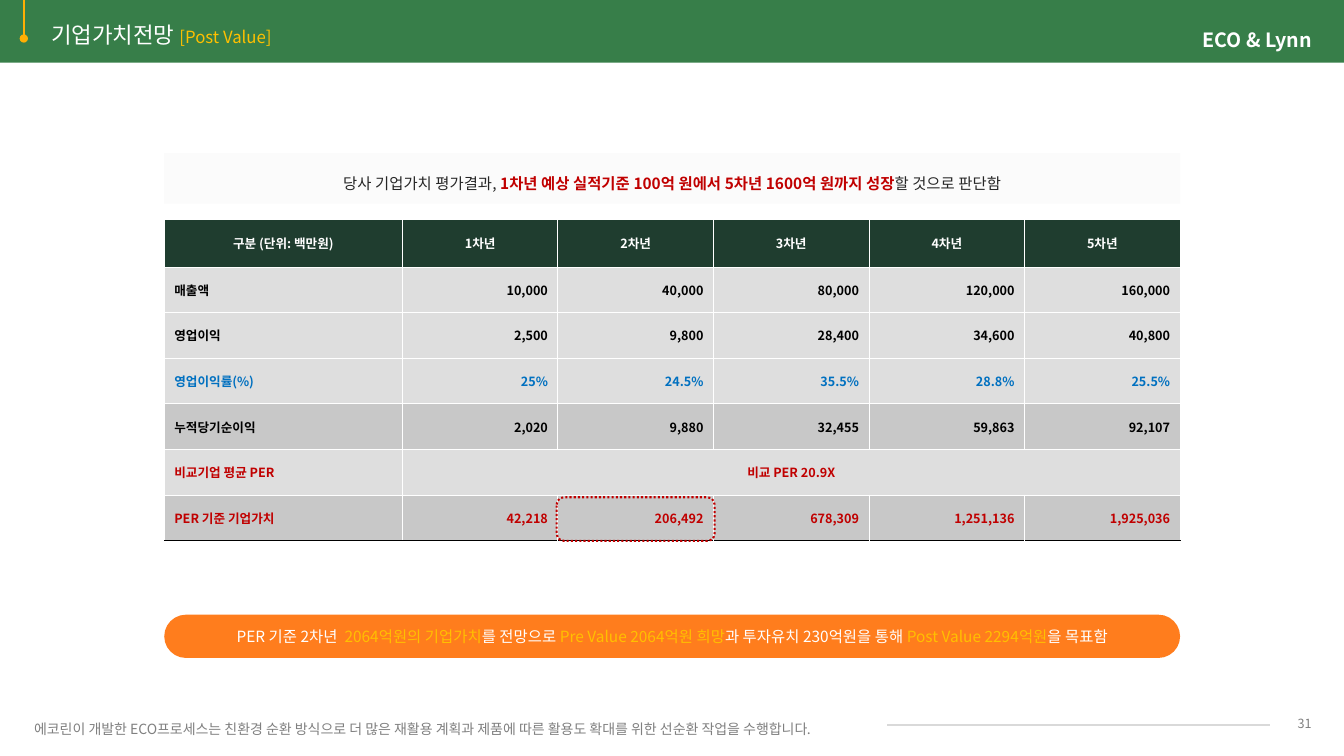
from lxml.etree import SubElement
from pptx import Presentation
from pptx.dml.color import RGBColor
from pptx.enum.dml import MSO_LINE_DASH_STYLE as Dash
from pptx.enum.shapes import MSO_CONNECTOR as Connector, MSO_SHAPE as Shape
from pptx.enum.text import MSO_ANCHOR as Anchor, PP_ALIGN as Align
from pptx.oxml import parse_xml
from pptx.oxml.ns import nsdecls, qn
from pptx.util import Cm, Pt

FONT = "Noto Sans CJK KR"
WHITE = RGBColor(0xFF, 0xFF, 0xFF)
BLACK = RGBColor(0x00, 0x00, 0x00)
INK = RGBColor(0x26, 0x26, 0x26)
GREY = RGBColor(0x80, 0x80, 0x80)
RULE_GREY = RGBColor(0xD9, 0xD9, 0xD9)
ROW_LIGHT = RGBColor(0xD9, 0xD9, 0xD9)
ROW_DARK = RGBColor(0xBF, 0xBF, 0xBF)
PALE = RGBColor(0xF8, 0xF8, 0xF8)
GREEN = RGBColor(0x37, 0x7E, 0x49)
DARK_GREEN = RGBColor(0x1F, 0x3D, 0x2F)
AMBER = RGBColor(0xFF, 0xAF, 0x04)
GOLD = RGBColor(0xFF, 0xC0, 0x00)
ORANGE = RGBColor(0xFF, 0x7D, 0x1D)
RED = RGBColor(0xC0, 0x00, 0x00)
BLUE = RGBColor(0x00, 0x70, 0xC0)

SLIDE_WIDTH, SLIDE_HEIGHT = 33.87, 19.05
LABEL_WIDTH, YEAR_WIDTH = 6, 3.92
HEAD_HEIGHT, ROW_HEIGHT = 1.19, 1.15
YEARS = ["1차년", "2차년", "3차년", "4차년", "5차년"]
# Label, values, text colour, fill
ROWS = [
    ("매출액", ["10,000", "40,000", "80,000", "120,000", "160,000"], BLACK, ROW_LIGHT),
    ("영업이익", ["2,500", "9,800", "28,400", "34,600", "40,800"], BLACK, ROW_LIGHT),
    ("영업이익률(%)", ["25%", "24.5%", "35.5%", "28.8%", "25.5%"], BLUE, ROW_LIGHT),
    ("누적당기순이익", ["2,020", "9,880", "32,455", "59,863", "92,107"], BLACK, ROW_DARK),
    ("비교기업 평균 PER", ["비교 PER 20.9X"], RED, ROW_LIGHT),
    ("PER 기준 기업가치", ["42,218", "206,492", "678,309", "1,251,136", "1,925,036"],
     RED, ROW_DARK),
]


def set_opacity(color, percent):
    SubElement(color, qn("a:alpha")).set("val", str(percent * 1000))


def write(frame, runs, size, align=Align.LEFT, bold=False, spacing=None):
    """Fill the first paragraph with (text, colour) runs; returns the runs."""
    paragraph = frame.paragraphs[0]
    paragraph.alignment = align
    if spacing:
        paragraph.line_spacing = spacing
    font = paragraph.font
    font.name, font.size, font.bold = FONT, Pt(size), bold
    SubElement(font._element, qn("a:ea")).set("typeface", FONT)
    written = []
    for text, color in runs:
        run = paragraph.add_run()
        run.text = text
        run.font.color.rgb = color
        written.append(run)
    return written


def add_box(slide, kind, box, fill=None, anchor=Anchor.MIDDLE):
    shape = slide.shapes.add_shape(kind, *(Cm(length) for length in box))
    shape.shadow.inherit = False
    shape.line.fill.background()
    if fill is None:
        shape.fill.background()
    else:
        shape.fill.solid()
        shape.fill.fore_color.rgb = fill
    shape.text_frame.word_wrap = True
    shape.text_frame.vertical_anchor = anchor
    return shape


def add_line(slide, start, end, color, width):
    line = slide.shapes.add_connector(
        Connector.STRAIGHT, *(Cm(length) for length in start + end))
    line.line.color.rgb = color
    line.line.width = Pt(width)
    SubElement(line._element.spPr, qn("a:effectLst"))
    return line


def add_footer(slide, left, top, width, height):
    middle = top + height / 2
    add_line(slide, (8.56, middle + 0.03), (32, middle + 0.03), RULE_GREY, 1)
    note = add_box(slide, Shape.RECTANGLE, (left + 0.61, top, 21.74, height), WHITE, Anchor.TOP)
    write(note.text_frame, [("에코린이 개발한 ECO프로세스는 친환경 순환 방식으로 더 많은 재활용 계획과 "
                             "제품에 따른 활용도 확대를 위한 선순환 작업을 수행합니다.", GREY)],
          10, spacing=1.5)
    number = slide.shapes.add_textbox(
        Cm(left + width - 1.84), Cm(top), Cm(1.7), Cm(height)).text_frame
    number.word_wrap = True
    number.vertical_anchor = Anchor.MIDDLE
    number.margin_left = number.margin_right = Cm(0.38)
    write(number, [("31", GREY)], 9, Align.CENTER)


def add_header(slide, left, top, width, height):
    add_box(slide, Shape.RECTANGLE, (left, top, width, height), GREEN)
    # Hanging line with a round end
    marker = add_line(slide, (left + 0.6, top), (left + 0.6, top + 0.97), AMBER, 1.5)
    SubElement(marker.line._get_or_add_ln(), qn("a:tailEnd")).set("type", "oval")
    # Company name
    name = add_box(slide, Shape.RECTANGLE, (left + width - 3.75, top + 0.56, 3.12, 0.89))
    frame = name.text_frame
    frame.margin_left = frame.margin_right = frame.margin_top = frame.margin_bottom = 0
    write(frame, [("ECO & Lynn", WHITE)], 14, Align.CENTER, bold=True)
    # Title
    title = slide.shapes.add_textbox(Cm(left + 1.04), Cm(top + 0.41), Cm(6.53), Cm(0.94))
    title.text_frame.word_wrap = False
    runs = write(title.text_frame, [("기업가치전망 ", WHITE), ("[Post Value]", GOLD)], 16)
    runs[1].font.size = Pt(12)


def add_statement(slide, left, top, width, height):
    panel = add_box(slide, Shape.RECTANGLE, (left, top, width, height), PALE)
    set_opacity(panel._element.spPr.find(qn("a:solidFill"))[0], 50)
    runs = write(panel.text_frame, [
        ("당사 기업가치 평가결과, ", INK),
        ("1차년 예상 실적기준 100억 원에서 5차년 1600억 원까지 성장", RED),
        ("할 것으로 판단함", INK)], 11, Align.CENTER, spacing=1.5)
    runs[1].font.bold = True


def fill_cell(cell, text, align, color, fill, opacity=100, bottom=(WHITE, 0.75)):
    cell.fill.solid()
    cell.fill.fore_color.rgb = fill
    properties = cell._tc.get_or_add_tcPr()
    set_opacity(properties.find(qn("a:solidFill"))[0], opacity)
    edges = [(side, WHITE, 0.75) for side in "LRT"] + [("B", *bottom)]
    for index, (side, line_color, width) in enumerate(edges):
        properties.insert(index, parse_xml(
            f'<a:ln{side} {nsdecls("a")} w="{Pt(width)}"><a:solidFill>'
            f'<a:srgbClr val="{line_color}"/></a:solidFill></a:ln{side}>'))
    cell.vertical_anchor = Anchor.MIDDLE
    write(cell.text_frame, [(text, color)], 9, align, bold=True)


def add_value_table(slide, left, top, width, height):
    table = slide.shapes.add_table(len(ROWS) + 1, len(YEARS) + 1, Cm(left), Cm(top),
                                   Cm(width), Cm(height)).table
    table.horz_banding = False
    for index, column in enumerate(table.columns):
        column.width = Cm(YEAR_WIDTH if index else LABEL_WIDTH)
    for index, row in enumerate(table.rows):
        row.height = Cm(ROW_HEIGHT if index else HEAD_HEIGHT)
    for index, text in enumerate(["구분 (단위: 백만원)"] + YEARS):
        fill_cell(table.cell(0, index), text, Align.CENTER, WHITE, DARK_GREEN)
    for row, (label, values, color, fill) in enumerate(ROWS, 1):
        bottom = (BLACK, 1) if row == len(ROWS) else (WHITE, 0.75)
        fill_cell(table.cell(row, 0), label, Align.LEFT, color, fill, 85, bottom)
        shared = len(values) == 1
        if shared:
            table.cell(row, 1).merge(table.cell(row, len(YEARS)))
        for column, value in enumerate(values, 1):
            fill_cell(table.cell(row, column), value,
                      Align.CENTER if shared else Align.RIGHT, color, fill, 85, bottom)
    # Dotted frame around the second year's company value
    frame = add_box(slide, Shape.ROUNDED_RECTANGLE,
                    (left + LABEL_WIDTH + YEAR_WIDTH - 0.03, top + height - 1.1,
                     YEAR_WIDTH + 0.06, 1.1))
    frame.line.color.rgb = RED
    frame.line.width = Pt(1.5)
    frame.line.dash_style = Dash.ROUND_DOT


def add_conclusion(slide, left, top, width, height):
    pill = add_box(slide, Shape.ROUNDED_RECTANGLE, (left, top, width, height), ORANGE)
    pill.adjustments[0] = 0.5
    runs = write(pill.text_frame, [
        ("PER 기준 2차년  ", WHITE), ("2064억원의 기업가치", GOLD), ("를 전망으로 ", WHITE),
        ("Pre Value 2064억원 희망", GOLD), ("과 투자유치 230억원을 통해 ", WHITE),
        ("Post Value 2294억원", GOLD), ("을 목표함", WHITE)], 11, Align.CENTER)
    # Soft text shadow
    for run in runs:
        run.font._element.append(parse_xml(
            f'<a:effectLst {nsdecls("a")}><a:outerShdw blurRad="38100" dist="38100" '
            'dir="2700000"><a:srgbClr val="000000"><a:alpha val="43000"/></a:srgbClr>'
            '</a:outerShdw></a:effectLst>'))


def main():
    presentation = Presentation()
    presentation.slide_width = Cm(SLIDE_WIDTH)
    presentation.slide_height = Cm(SLIDE_HEIGHT)
    slide = presentation.slides.add_slide(presentation.slide_layouts[6])
    left, width = 4.14, LABEL_WIDTH + YEAR_WIDTH * len(YEARS)
    add_footer(slide, 0, 17.82, SLIDE_WIDTH, 0.84)
    add_header(slide, 0, 0, SLIDE_WIDTH, 1.58)
    add_statement(slide, left, 3.86, width, 1.27)
    add_conclusion(slide, left, 15.49, width, 1.09)
    add_value_table(slide, left, 5.54, width, HEAD_HEIGHT + ROW_HEIGHT * len(ROWS))
    presentation.save("out.pptx")


if __name__ == "__main__":
    main()
